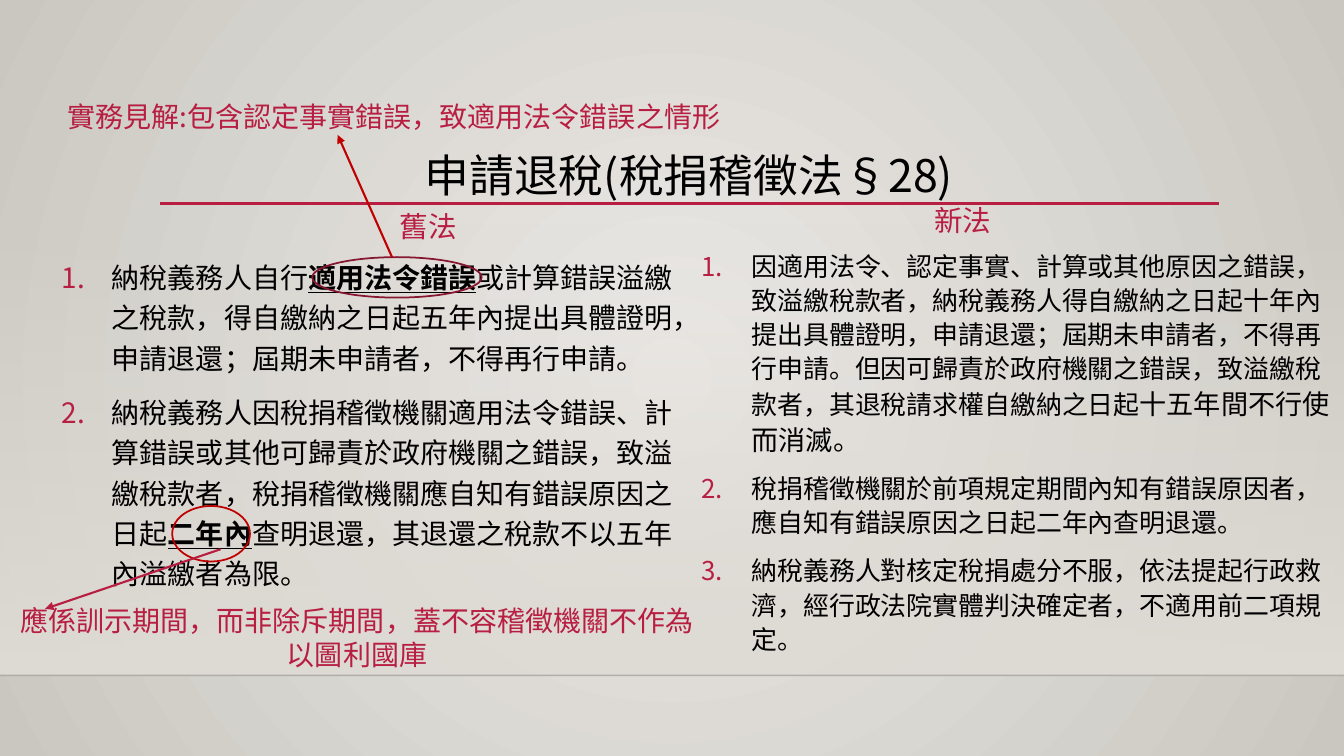
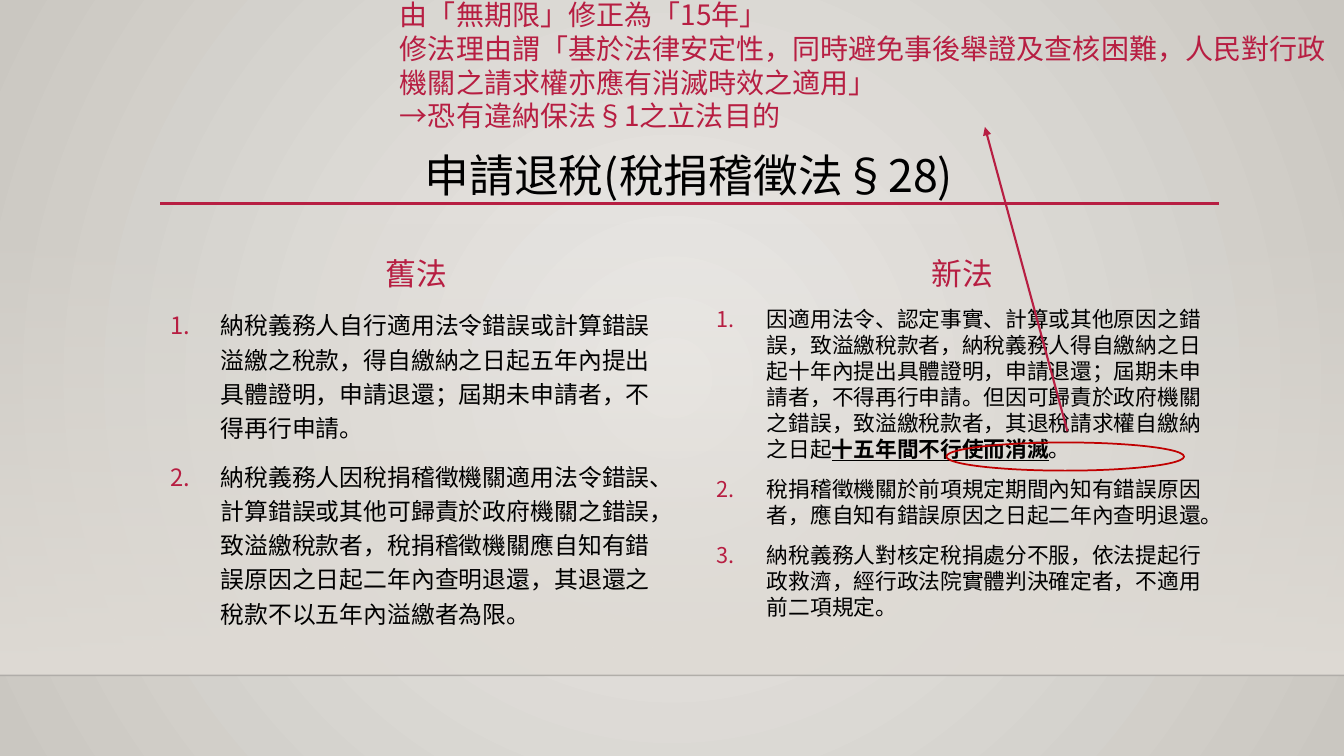
from lxml.etree import SubElement
from pptx import Presentation
from pptx.dml.color import RGBColor
from pptx.enum.shapes import MSO_CONNECTOR, MSO_SHAPE
from pptx.enum.text import MSO_ANCHOR, PP_ALIGN
from pptx.oxml import parse_xml
from pptx.oxml.ns import nsdecls, qn
from pptx.util import Cm, Pt

FONT = "Noto Sans CJK SC"
COLORS = {
    "text": "000000",
    "accent": "B71E42",
    "accent_dark": "871631",
    "red": "C00000",
    "center": "ECEAE7",
    "edge": "CAC7C1",
    "band": "DFDBD5",
    "floor": "000001",
}
WIDTH, HEIGHT = 33.87, 19.05
TITLE = "申請退稅(稅捐稽徵法§28)"
TITLE_BOX = (4.01, 2.24, 26.7, 2.95)
BAND_TOP, FLOOR = 5.61, 17.02
RULE = (4.04, 5.13, 30.73, 5.13)

OLD_LAW = [
    "納稅義務人自行適用法令錯誤或計算錯誤溢繳之稅款，得自繳納之日起五年內提出具體證明，申請退還；屆期未申請者，不得再行申請。",
    "納稅義務人因稅捐稽徵機關適用法令錯誤、計算錯誤或其他可歸責於政府機關之錯誤，致溢繳稅款者，稅捐稽徵機關應自知有錯誤原因之日起二年內查明退還，其退還之稅款不以五年內溢繳者為限。",
]
NEW_LAW = [
    "因適用法令、認定事實、計算或其他原因之錯誤，致溢繳稅款者，納稅義務人得自繳納之日起十年內提出具體證明，申請退還；屆期未申請者，不得再行申請。但因可歸責於政府機關之錯誤，致溢繳稅款者，其退稅請求權自繳納之日起十五年間不行使而消滅。",
    "稅捐稽徵機關於前項規定期間內知有錯誤原因者，應自知有錯誤原因之日起二年內查明退還。",
    "納稅義務人對核定稅捐處分不服，依法提起行政救濟，經行政法院實體判決確定者，不適用前二項規定。",
]
STRONG = {"bold": True, "underline": True}

SLIDES = [
    {
        "labels": [
            ("舊法", (4.34, 4.29, 12.9, 1.98), 20.4, 0.9),
            ("新法", (17.81, 5.08, 12.9, 1.04), 20.4, 0.9),
        ],
        "laws": [
            (OLD_LAW, (1.3, 6.27, 16.13, 10.77), 20, 1.2,
             {0: ("適用法令錯誤", STRONG), 1: ("二年內", STRONG)}),
            (NEW_LAW, (17.42, 6.1, 16.43, 10.95), 18.5, 1.1,
             {0: ("十五年間不行使而消滅。", {"size": Pt(19.4)})}),
        ],
        "ellipses": [
            ((7.87, 6.48, 4.27, 1.02), "accent_dark"),
            ((4.34, 12.75, 1.96, 1.4), "red"),
        ],
        "arrows": [
            ((9.88, 6.48, 8.51, 3.4), "red"),
            ((5.56, 13.84, 1.14, 15.34), "accent"),
        ],
        "notes": [
            (["實務見解:包含認定事實錯誤，致適用法令錯誤之情形"],
             (1.3, 2.39, 17.25, 1.12), PP_ALIGN.CENTER),
            (["應係訓示期間，而非除斥期間，蓋不容稽徵機關不作為以圖利國庫"],
             (0.2, 15.09, 17.6, 1.96), PP_ALIGN.CENTER),
        ],
    },
    {
        "labels": [
            ("舊法", (4.04, 5.23, 12.9, 2.24), 22, 1.0),
            ("新法", (17.81, 5.23, 12.9, 2.24), 22, 1.0),
        ],
        "laws": [
            (OLD_LAW, (4.04, 7.57, 12.9, 9.19), 17, 1.2, {}),
            (NEW_LAW, (17.81, 7.57, 12.9, 9.19), 15.5, 1.0,
             {0: ("十五年間不行使而消滅", STRONG)}),
        ],
        "ellipses": [((23.85, 11.15, 5.99, 0.71), "red")],
        "arrows": [((26.9, 10.87, 24.82, 3.2), "accent")],
        "notes": [
            (["由「無期限」修正為「15年」",
              "修法理由謂「基於法律安定性，同時避免事後舉證及查核困難，人民對行政機關之請求權亦應有消滅時效之適用」",
              "→恐有違納保法§1之立法目的"],
             (9.83, -0.18, 24.03, 3.68), PP_ALIGN.LEFT),
        ],
    },
]


def rgb(name):
    return RGBColor.from_string(COLORS[name])


def lengths(values):
    return [Cm(value) for value in values]


def gradient(stops, direction):
    stop_xml = "".join(
        f'<a:gs pos="{position}"><a:srgbClr val="{COLORS[name]}">'
        f'<a:alpha val="{alpha}"/></a:srgbClr></a:gs>'
        for position, name, alpha in stops
    )
    return parse_xml(
        f'<a:gradFill {nsdecls("a")} rotWithShape="1">'
        f'<a:gsLst>{stop_xml}</a:gsLst>{direction}</a:gradFill>'
    )


def set_gradient(fill, parent, stops, direction):
    fill.gradient()
    old = parent.find(qn("a:gradFill"))
    parent.replace(old, gradient(stops, direction))


def style_run(run, size, color):
    run.font.size = Pt(size)
    run.font.name = FONT
    run.font.color.rgb = rgb(color)
    SubElement(run.font._element, qn("a:ea"), typeface=FONT)


def add_line(slide, ends, color, width, arrow=False):
    line = slide.shapes.add_connector(MSO_CONNECTOR.STRAIGHT, *lengths(ends))
    line.line.color.rgb = rgb(color)
    line.line.width = Pt(width)
    if arrow:
        SubElement(line.line._get_or_add_ln(), qn("a:tailEnd"), type="triangle")
    SubElement(line._element.spPr, qn("a:effectLst"))
    return line


def add_text(slide, texts, box, size, color, align, spacing=1.0,
             anchor=MSO_ANCHOR.TOP):
    frame = slide.shapes.add_textbox(*lengths(box)).text_frame
    frame.word_wrap = True
    frame.vertical_anchor = anchor
    frame.text = "\n".join(texts)
    for paragraph in frame.paragraphs:
        paragraph.alignment = align
        paragraph.line_spacing = spacing
        for run in paragraph.runs:
            style_run(run, size, color)


def add_law(slide, articles, box, size, spacing, emphasis):
    frame = slide.shapes.add_textbox(*lengths(box)).text_frame
    frame.word_wrap = True
    for index, article in enumerate(articles):
        paragraph = frame.add_paragraph() if index else frame.paragraphs[0]
        properties = paragraph._p.get_or_add_pPr()
        properties.set("marL", str(Cm(1.27)))
        properties.set("indent", str(-Cm(1.27)))
        bullet_color = SubElement(properties, qn("a:buClr"))
        SubElement(bullet_color, qn("a:srgbClr"), val=COLORS["accent"])
        SubElement(properties, qn("a:buAutoNum"), type="arabicPeriod")
        paragraph.line_spacing = spacing
        if index:
            paragraph.space_before = Pt(10)
        phrase, style = emphasis.get(index, (None, {}))
        parts = article.partition(phrase) if phrase else [article]
        for part in filter(None, parts):
            run = paragraph.add_run()
            run.text = part
            style_run(run, size, "text")
            if part == phrase:
                for attribute, value in style.items():
                    setattr(run.font, attribute, value)


def add_ellipse(slide, box, color):
    ellipse = slide.shapes.add_shape(MSO_SHAPE.OVAL, *lengths(box))
    ellipse.shadow.inherit = False
    ellipse.fill.background()
    ellipse.line.color.rgb = rgb(color)
    ellipse.line.width = Pt(1.25)


def decorate_layout(presentation, layout, slide):
    fill = presentation.slide_master.background.fill
    set_gradient(
        fill, presentation.slide_master._element.cSld.bg.bgPr,
        [(0, "center", 100000), (100000, "edge", 100000)],
        '<a:path path="circle"><a:fillToRect l="50000" t="50000" r="50000" b="50000"/></a:path>',
    )
    band = slide.shapes.add_shape(
        MSO_SHAPE.RECTANGLE, *lengths((0, BAND_TOP, WIDTH, FLOOR - BAND_TOP)))
    band.shadow.inherit = False
    band.line.fill.background()
    set_gradient(
        band.fill, band._element.spPr,
        [(0, "band", 0), (100000, "band", 100000)],
        '<a:lin ang="5400000" scaled="0"/>',
    )
    floor = add_line(slide, (0, FLOOR, WIDTH, FLOOR), "floor", 1)
    floor_color = floor._element.spPr.find(".//" + qn("a:srgbClr"))
    SubElement(floor_color, qn("a:alpha"), val="20000")
    rule = add_line(slide, RULE, "accent", 2.5)
    for position, shape in enumerate((band, floor, rule), start=2):
        layout.shapes._spTree.insert(position, shape._element)


def set_title(slide):
    title = slide.shapes.title
    title.left, title.top, title.width, title.height = lengths(TITLE_BOX)
    frame = title.text_frame
    frame.text = TITLE
    frame.word_wrap = True
    frame.vertical_anchor = MSO_ANCHOR.TOP
    paragraph = frame.paragraphs[0]
    paragraph.alignment = PP_ALIGN.CENTER
    paragraph.line_spacing = 2.0
    style_run(paragraph.runs[0], 32, "text")


def main():
    presentation = Presentation()
    presentation.slide_width, presentation.slide_height = Cm(WIDTH), Cm(HEIGHT)
    layout = presentation.slide_layouts.get_by_name("Title Only")
    for number, content in enumerate(SLIDES):
        slide = presentation.slides.add_slide(layout)
        if number == 0:
            decorate_layout(presentation, layout, slide)
        set_title(slide)
        for text, box, size, spacing in content["labels"]:
            add_text(slide, [text], box, size, "accent", PP_ALIGN.CENTER,
                     spacing, MSO_ANCHOR.BOTTOM)
        for law in content["laws"]:
            add_law(slide, *law)
        for box, color in content["ellipses"]:
            add_ellipse(slide, box, color)
        for ends, color in content["arrows"]:
            add_line(slide, ends, color, 1.5, arrow=True)
        for texts, box, align in content["notes"]:
            add_text(slide, texts, box, 20, "accent", align)
    presentation.save("out.pptx")


if __name__ == "__main__":
    main()
